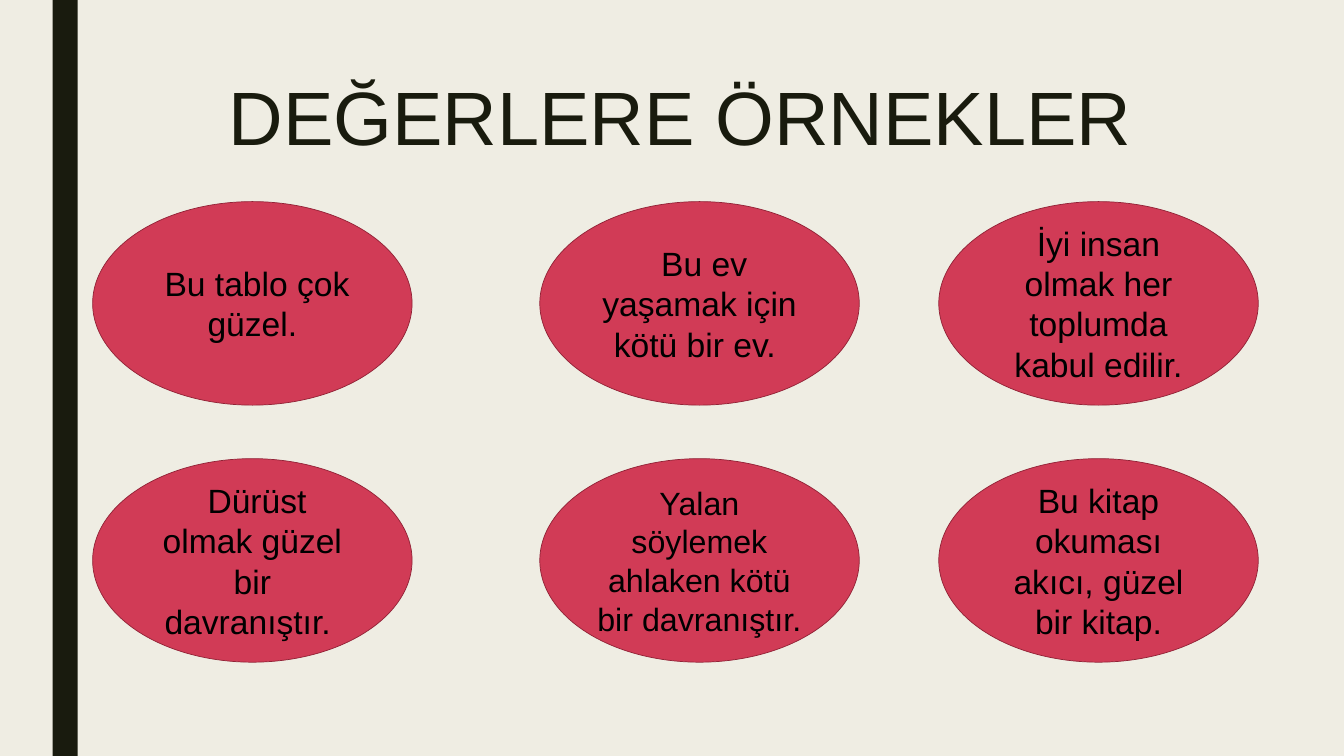
from dataclasses import dataclass

from pptx import Presentation
from pptx.dml.color import RGBColor
from pptx.enum.shapes import MSO_SHAPE
from pptx.enum.text import MSO_ANCHOR, PP_ALIGN
from pptx.util import Pt


@dataclass(frozen=True)
class Theme:
    background: RGBColor = RGBColor.from_string("EFEDE3")
    dark: RGBColor = RGBColor.from_string("191B0E")
    oval: RGBColor = RGBColor.from_string("D13B56")
    oval_line: RGBColor = RGBColor.from_string("912236")
    oval_text: RGBColor = RGBColor.from_string("000000")
    font: str = "Arial"
    title_size: float = 54
    example_size: float = 24
    long_example_size: float = 23


THEME = Theme()
SLIDE_WIDTH, SLIDE_HEIGHT = 960, 540
COLUMN_OFFSETS = (0, 319.4, 604.4)
ROW_PITCH = 183.6
OVAL_WIDTH, OVAL_HEIGHT = 228.2, 145.4
EXAMPLES = (
    (
        (" Bu tablo çok güzel.", THEME.example_size),
        (" Bu ev yaşamak için kötü bir ev. ", THEME.example_size),
        ("İyi insan olmak her toplumda kabul edilir.", THEME.example_size),
    ),
    (
        (" Dürüst olmak güzel bir davranıştır. ", THEME.example_size),
        ("Yalan söylemek ahlaken kötü bir davranıştır.", THEME.long_example_size),
        ("Bu kitap okuması akıcı, güzel bir kitap.", THEME.example_size),
    ),
)


def write_text(shape, text, size, color, anchor):
    text_frame = shape.text_frame
    text_frame.text = text
    text_frame.word_wrap = True
    text_frame.vertical_anchor = anchor
    paragraph = text_frame.paragraphs[0]
    paragraph.alignment = PP_ALIGN.CENTER
    font = paragraph.runs[0].font
    font.name = THEME.font
    font.size = Pt(size)
    font.color.rgb = color
    return paragraph


def add_filled_shape(slide, kind, box, color):
    shape = slide.shapes.add_shape(kind, *map(Pt, box))
    shape.shadow.inherit = False
    shape.fill.solid()
    shape.fill.fore_color.rgb = color
    return shape


def add_side_bar(slide, box):
    bar = add_filled_shape(slide, MSO_SHAPE.RECTANGLE, box, THEME.dark)
    bar.line.fill.background()


def add_title(slide, box, text):
    title = slide.shapes.add_textbox(*map(Pt, box))
    paragraph = write_text(title, text, THEME.title_size, THEME.dark, MSO_ANCHOR.TOP)
    paragraph.line_spacing = 0.89


def add_example(slide, box, text, size):
    oval = add_filled_shape(slide, MSO_SHAPE.OVAL, box, THEME.oval)
    oval.line.color.rgb = THEME.oval_line
    oval.line.width = Pt(0.5)
    write_text(oval, text, size, THEME.oval_text, MSO_ANCHOR.MIDDLE)


def add_example_grid(slide, left, top):
    for row, examples in enumerate(EXAMPLES):
        for offset, (text, size) in zip(COLUMN_OFFSETS, examples):
            box = (left + offset, top + row * ROW_PITCH, OVAL_WIDTH, OVAL_HEIGHT)
            add_example(slide, box, text, size)


def main():
    presentation = Presentation()
    presentation.slide_width = Pt(SLIDE_WIDTH)
    presentation.slide_height = Pt(SLIDE_HEIGHT)
    slide = presentation.slides.add_slide(presentation.slide_layouts[6])
    slide.background.fill.solid()
    slide.background.fill.fore_color.rgb = THEME.background
    add_side_bar(slide, (37.5, 0, 18, SLIDE_HEIGHT))
    add_title(slide, (108, 54, 756, 116.6), "DEĞERLERE ÖRNEKLER")
    add_example_grid(slide, 66.2, 144)
    presentation.save("out.pptx")


if __name__ == "__main__":
    main()
